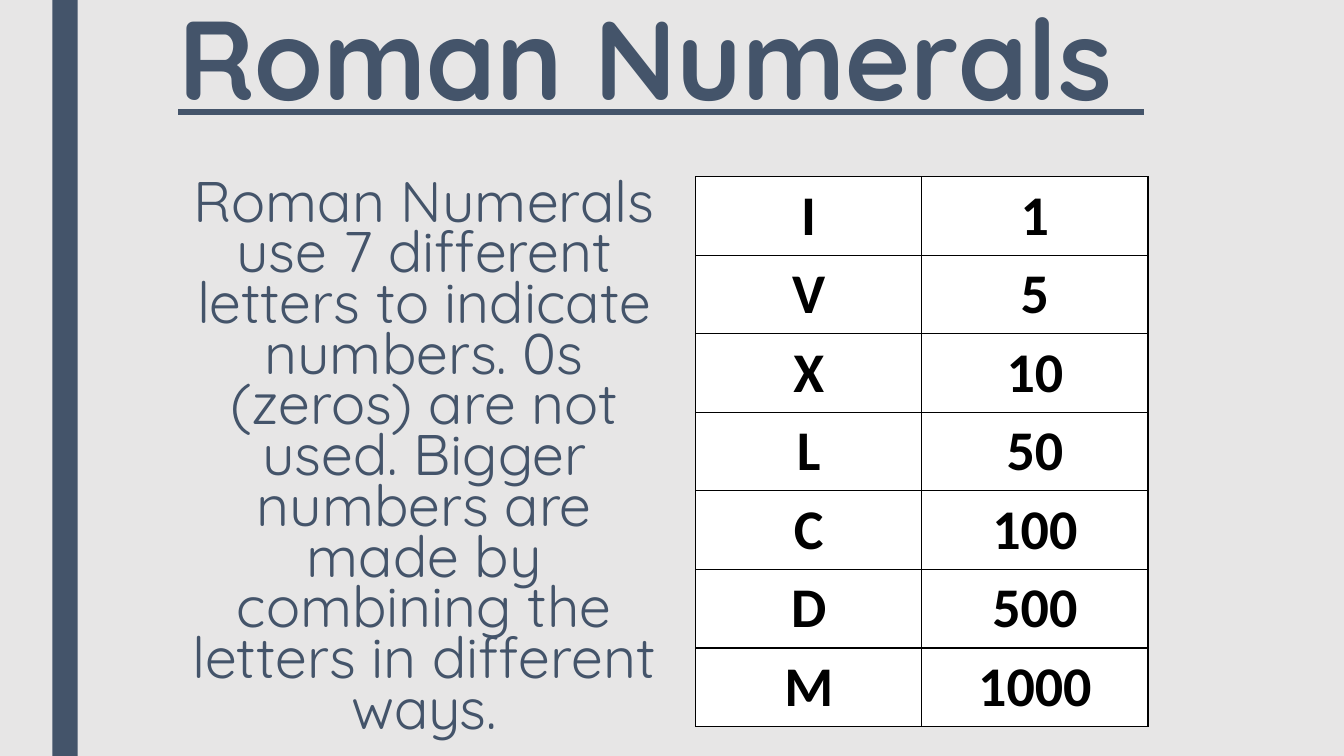
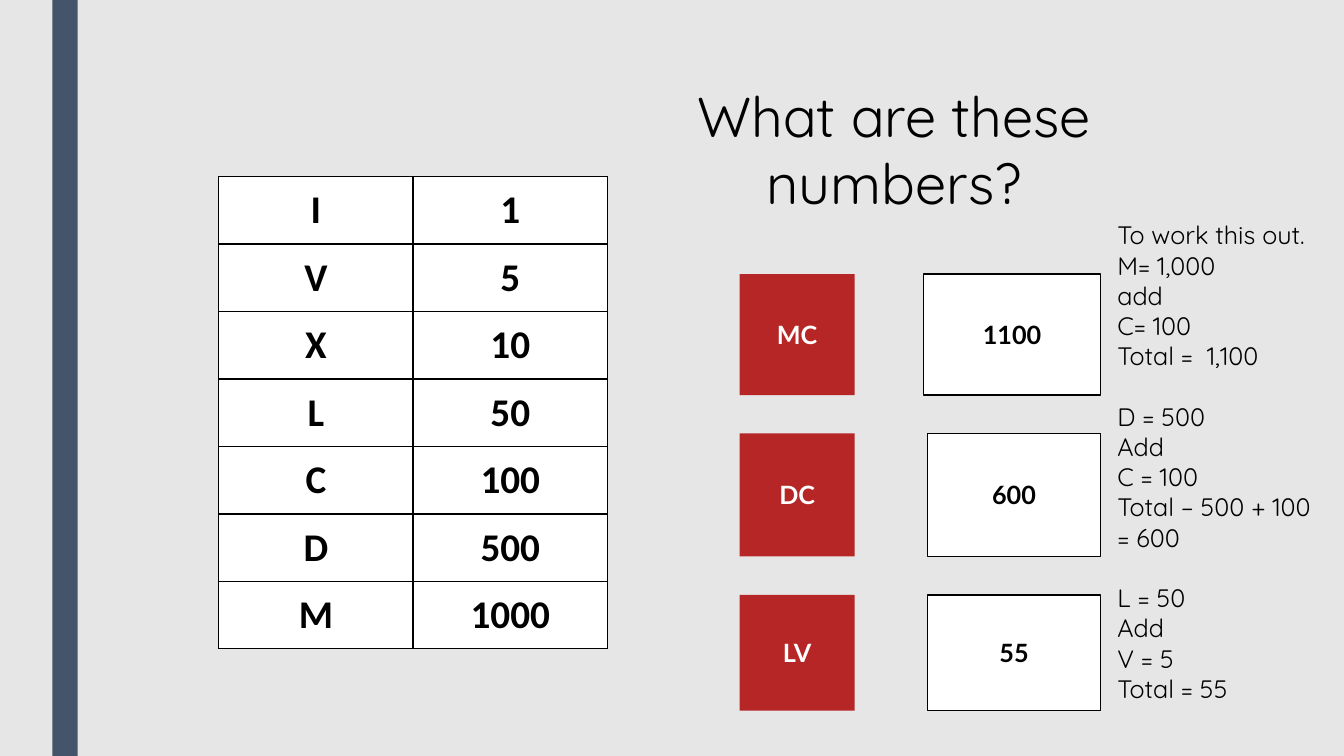
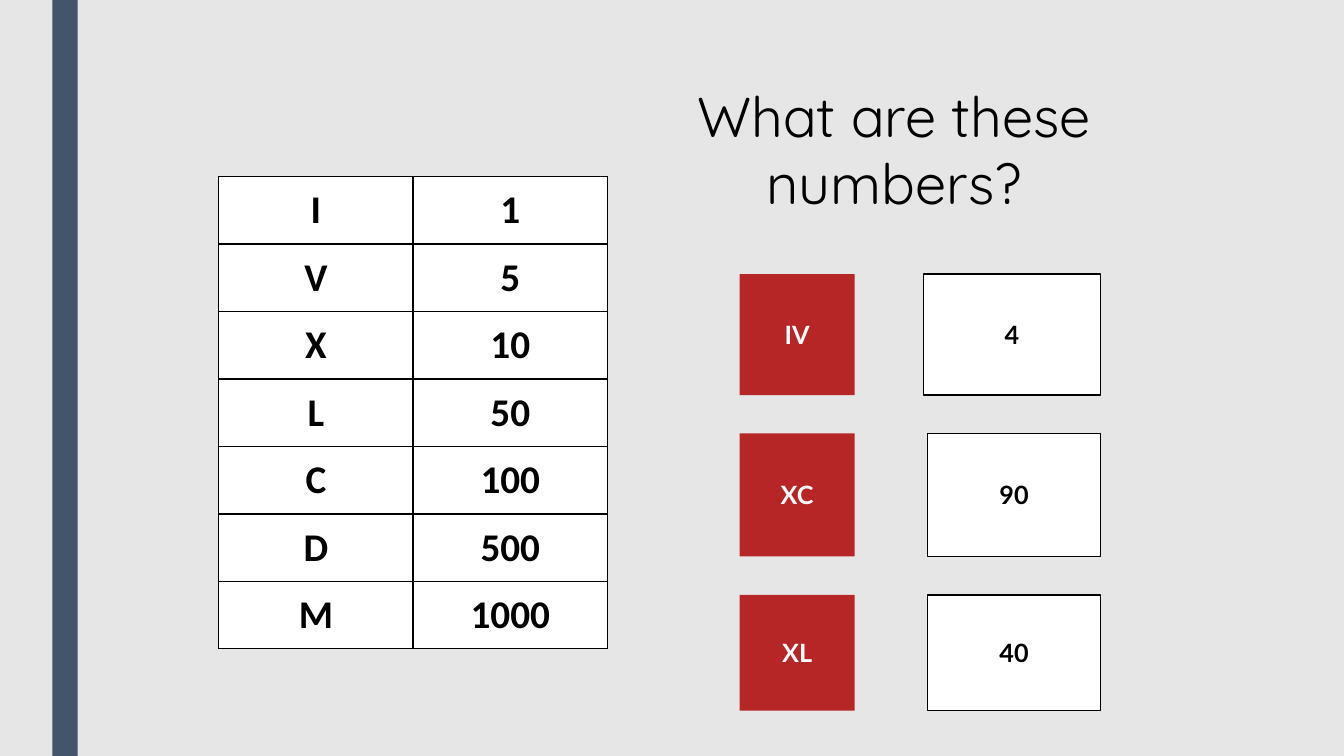
from dataclasses import dataclass

from lxml import etree
from pptx import Presentation
from pptx import util as u
from pptx.dml.color import RGBColor
from pptx.enum import shapes, text
from pptx.oxml import ns

Cm, Pt = u.Cm, u.Pt
ALIGN, ANCHOR = text.PP_ALIGN, text.MSO_ANCHOR


@dataclass(frozen=True)
class Theme:
    # Colours
    paper: str = "E7E6E6"
    slate: str = "44546A"
    red: str = "B72626"
    white: str = "FFFFFF"
    black: str = "000000"
    # Fonts
    display: str = "Quicksand"
    label: str = "Lato"
    grid: str = "Calibri"
    # Type sizes
    title: float = 80
    body: float = 40.8
    heading: float = 40
    small: float = 18
    grid_large: float = 40
    grid_small: float = 28


T = Theme()

NUMERALS = [("I", 1), ("V", 5), ("X", 10), ("L", 50),
            ("C", 100), ("D", 500), ("M", 1000)]

INTRO = ("Roman Numerals use 7 different letters to indicate numbers. "
         "0s (zeros) are not used. Bigger numbers are made by combining "
         "the letters in different ways.")

WORKINGS = [
    ["To work this out. M= 1,000", "add", "C= 100", "Total =  1,100"],
    ["D = 500", "Add", "C = 100", "Total – 500 + 100 = 600"],
    ["L = 50", "Add", "V = 5", "Total = 55"],
]

# Quiz rows: top, height and left edge of the answer, in cm
QUIZ_ROWS = [(6.91, 3.05, 23.27), (10.92, 3.1, 23.37), (14.99, 2.92, 23.37)]
QUESTION_LEFT, QUESTION_WIDTH, ANSWER_RIGHT = 18.64, 2.9, 27.74


def rgb(value):
    return RGBColor.from_string(value)


def write(p, words, *, size, font=T.display, color=T.black, bold=False,
          underline=False, align=ALIGN.LEFT, spacing=1.0, before=0):
    """Put one formatted run into a paragraph."""
    p.alignment, p.line_spacing = align, spacing
    p.space_before, p.space_after = Pt(before), Pt(0)
    r = p.add_run()
    r.text = str(words)
    f = r.font
    f.name, f.size, f.bold, f.underline = font, Pt(size), bold, underline
    f.color.rgb = rgb(color)


class Deck:
    def __init__(self):
        self.prs = Presentation()
        self.prs.slide_width, self.prs.slide_height = Cm(33.87), Cm(19.05)
        fill = self.prs.slide_master.background.fill
        fill.solid()
        fill.fore_color.rgb = rgb(T.paper)
        self.s = None

    def slide(self):
        self.s = self.prs.slides.add_slide(self.prs.slide_layouts[5])
        self.box(1.32, 0, 0.64, 19.05, fill=T.slate)

    def frame(self, sp):
        tf = sp.text_frame
        tf.word_wrap = True
        tf.auto_size = text.MSO_AUTO_SIZE.NONE
        tf.vertical_anchor = ANCHOR.TOP
        return tf

    def title(self, words, x, y, w, h, **style):
        sp = self.s.shapes.title
        sp.left, sp.top, sp.width, sp.height = map(Cm, (x, y, w, h))
        write(self.frame(sp).paragraphs[0], words, **style)

    def text(self, groups, x, y, w, h, gap=0, **style):
        """Groups of lines, with a gap before each group but the first."""
        tf = self.frame(self.s.shapes.add_textbox(*map(Cm, (x, y, w, h))))
        p = tf.paragraphs[0]
        for i, lines in enumerate(groups):
            for j, line in enumerate(lines):
                if i or j:
                    p = tf.add_paragraph()
                write(p, line, before=gap if i and not j else 0, **style)

    def box(self, x, y, w, h, fill, words=None, line=None, color=T.white):
        sp = self.s.shapes.add_shape(shapes.MSO_SHAPE.RECTANGLE,
                                     *map(Cm, (x, y, w, h)))
        sp.shadow.inherit = False
        sp.fill.solid()
        sp.fill.fore_color.rgb = rgb(fill)
        if line:
            sp.line.color.rgb, sp.line.width = rgb(line), Pt(1)
        else:
            sp.line.fill.background()
        if words is not None:
            sp.text_frame.vertical_anchor = ANCHOR.MIDDLE
            write(sp.text_frame.paragraphs[0], words, size=T.small,
                  font=T.label, color=color, bold=True, align=ALIGN.CENTER)

    def borders(self, cell):
        tc_pr = cell._tc.get_or_add_tcPr()
        for side in ("a:lnL", "a:lnR", "a:lnT", "a:lnB"):
            ln = etree.SubElement(tc_pr, ns.qn(side), w=str(Pt(1)))
            fill = etree.SubElement(ln, ns.qn("a:solidFill"))
            etree.SubElement(fill, ns.qn("a:srgbClr"), val=T.black)

    def numeral_table(self, x, y, w, row_height, size):
        n = len(NUMERALS)
        table = self.s.shapes.add_table(
            n, 2, Cm(x), Cm(y), Cm(w), Cm(row_height * n)).table
        for row, values in zip(table.rows, NUMERALS):
            row.height = Cm(row_height)
            for cell, value in zip(row.cells, values):
                self.borders(cell)
                cell.fill.solid()
                cell.fill.fore_color.rgb = rgb(T.white)
                cell.vertical_anchor = ANCHOR.MIDDLE
                write(cell.text_frame.paragraphs[0], value, size=size,
                      font=T.grid, bold=True, align=ALIGN.CENTER)

    def quiz(self, pairs):
        """A slide with the key, the heading and question-answer rows."""
        self.slide()
        self.numeral_table(5.51, 4.45, 9.8, 1.7, T.grid_small)
        self.title("What are these numbers?", 16.33, 1.93, 12.4, 3.68,
                   size=T.heading, align=ALIGN.CENTER)
        for (y, h, left), (question, answer) in zip(QUIZ_ROWS, pairs):
            self.box(QUESTION_LEFT, y, QUESTION_WIDTH, h, T.red, question)
            self.box(left, y, ANSWER_RIGHT - left, h, T.white, answer,
                     line=T.black, color=T.black)


def main():
    deck = Deck()

    # Introduction
    deck.slide()
    deck.title("Roman Numerals ", 4.24, 0, 25.4, 3.91, size=T.title,
               color=T.slate, bold=True, underline=True, spacing=0.89)
    deck.text([[INTRO]], 4.24, 4.45, 12.9, 14.6, size=T.body,
              color=T.slate, align=ALIGN.CENTER, spacing=0.74)
    deck.numeral_table(17.53, 4.45, 11.4, 1.98, T.grid_large)

    # Adding letters, with workings
    deck.quiz([("MC", 1100), ("DC", 600), ("LV", 55)])
    deck.text(WORKINGS, 27.91, 5.41, 5.51, 12.57, gap=21.6, size=T.small)

    # Subtracting letters
    deck.quiz([("IV", 4), ("XC", 90), ("XL", 40)])

    deck.prs.save("out.pptx")


if __name__ == "__main__":
    main()
